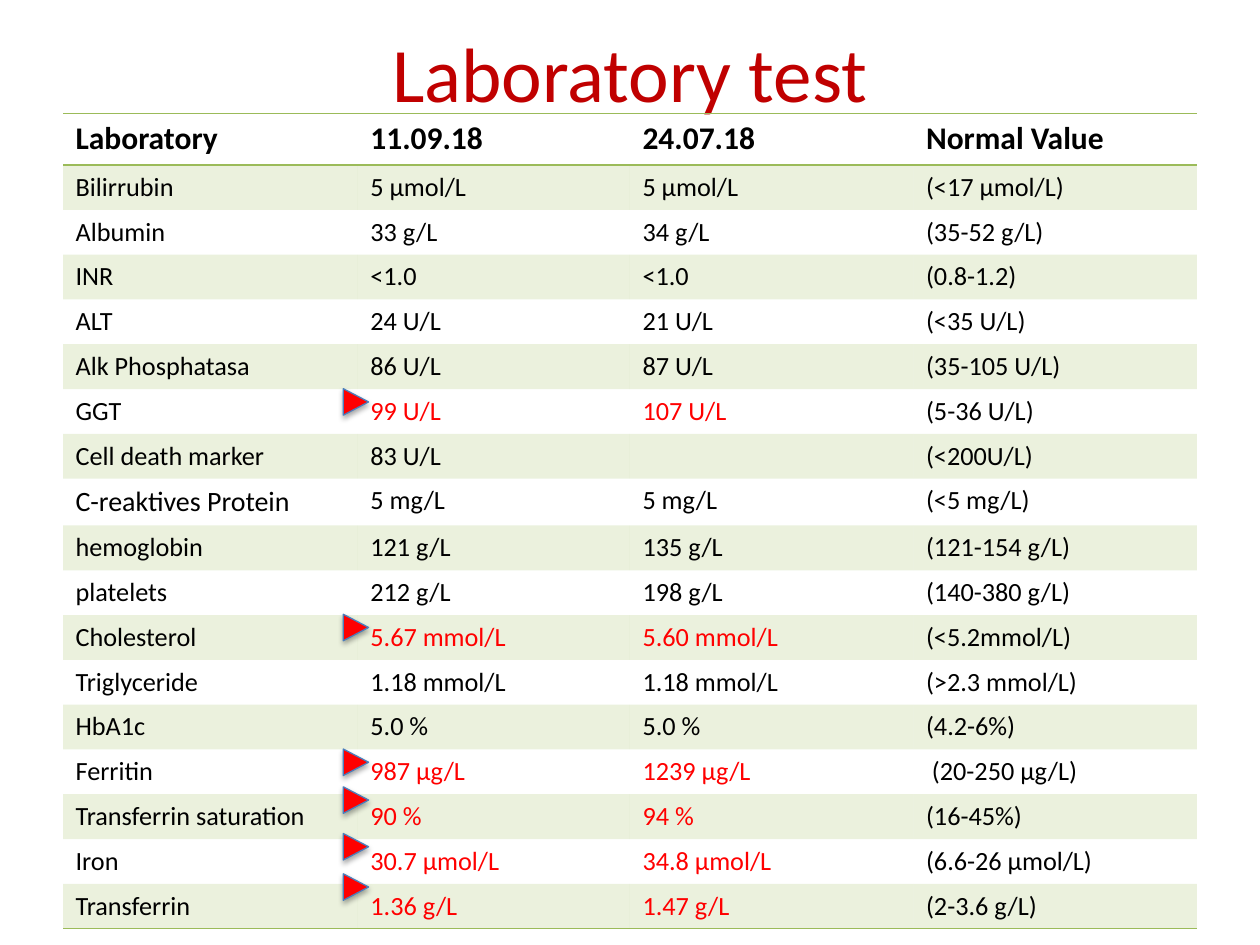
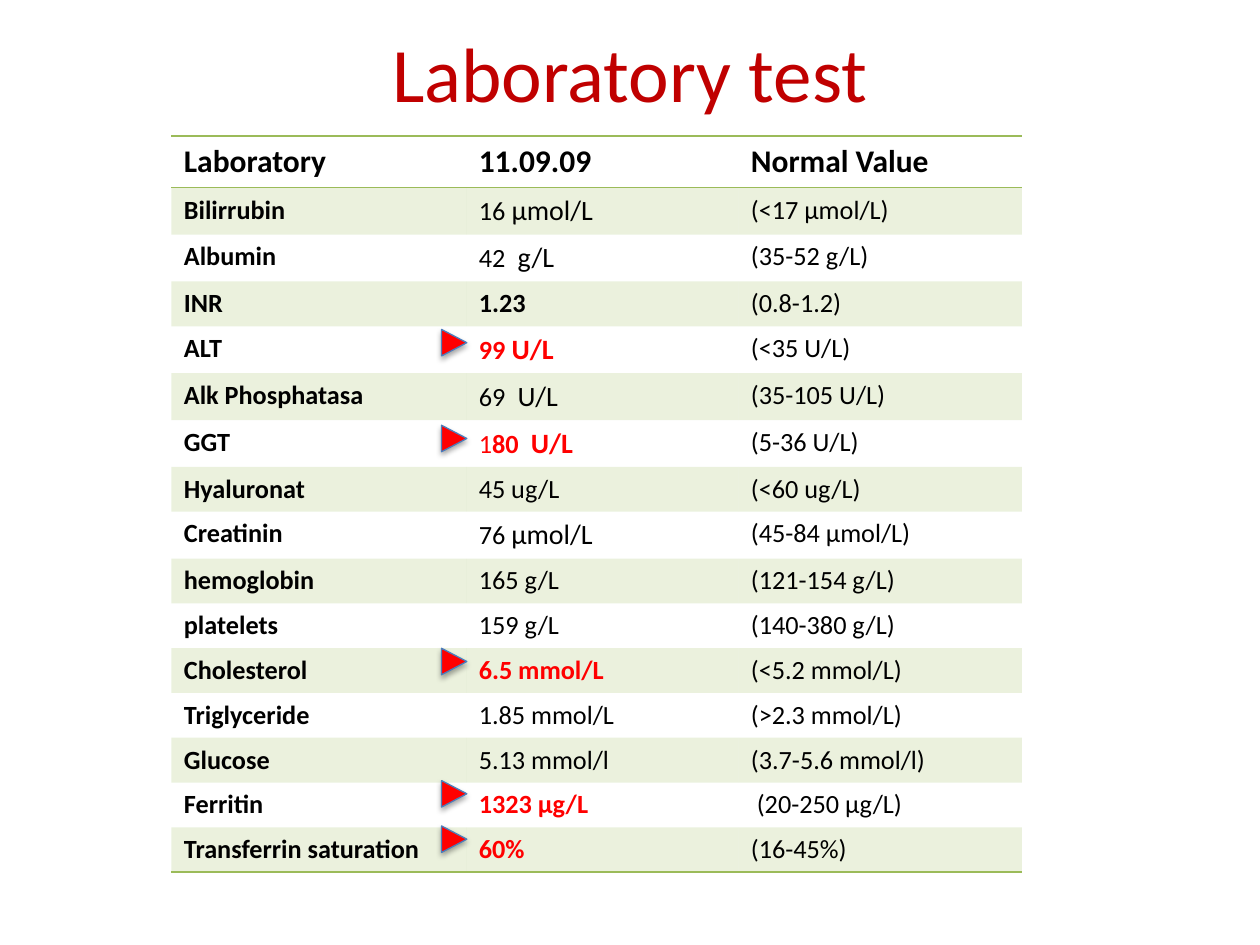
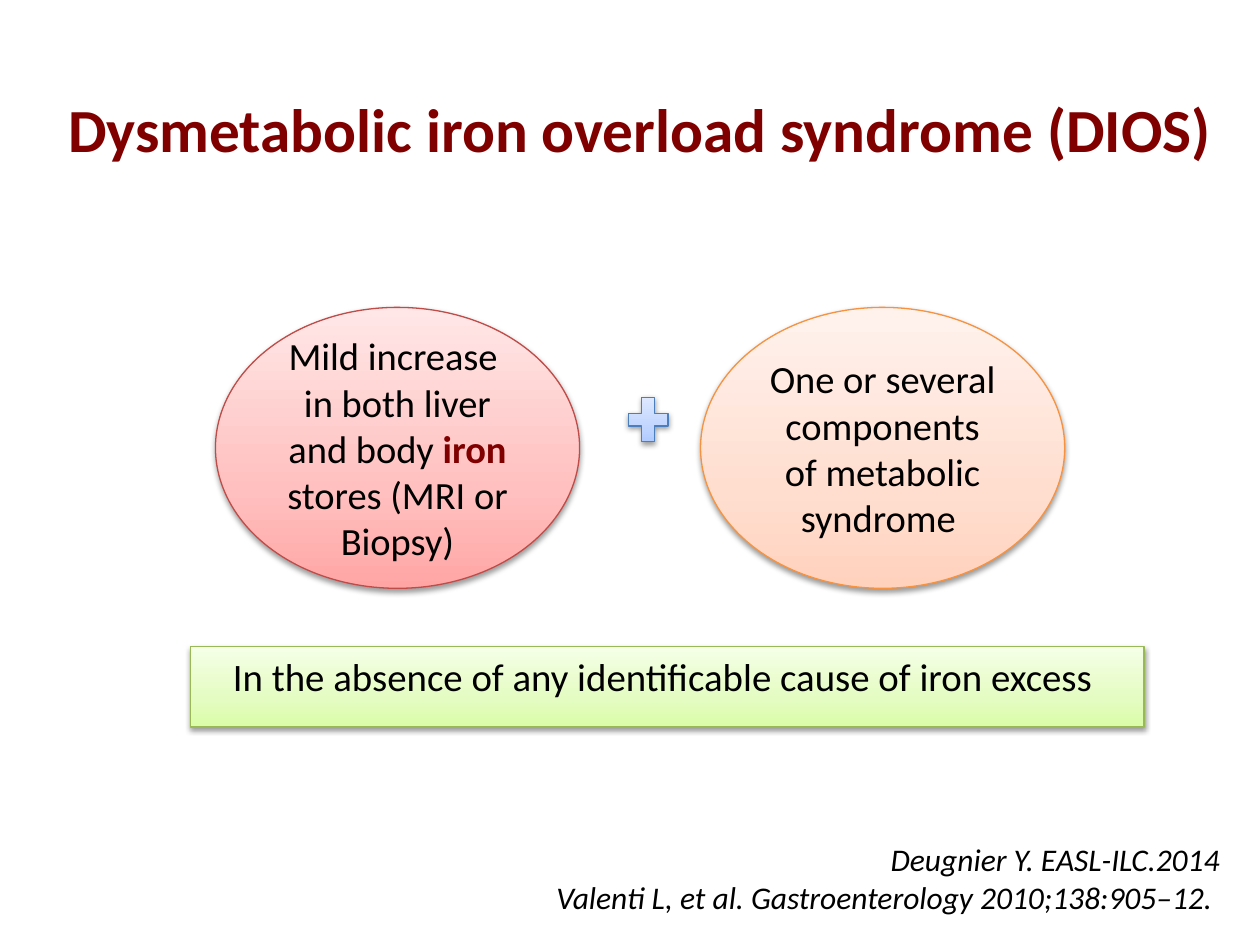
from copy import deepcopy

from lxml.etree import SubElement
from pptx import Presentation
from pptx.dml.color import RGBColor
from pptx.enum.shapes import MSO_SHAPE as SHAPE
from pptx.enum.text import MSO_ANCHOR as ANCHOR, MSO_AUTO_SIZE as AUTO_SIZE, PP_ALIGN as ALIGN
from pptx.oxml.ns import qn
from pptx.util import Inches, Pt

FONT = "Calibri"
BLACK = RGBColor(0x00, 0x00, 0x00)
RED = RGBColor(0xFF, 0x00, 0x00)
TITLE_RED = RGBColor(0xC0, 0x00, 0x00)
MAROON = RGBColor(0x80, 0x00, 0x00)
GREEN = RGBColor(0x9B, 0xBB, 0x59)
BLUE_LINE = RGBColor(0x4B, 0x7E, 0xBC)
ROSE_LINE = RGBColor(0xBF, 0x4C, 0x48)
ORANGE_LINE = RGBColor(0xF6, 0x92, 0x40)
LIME_LINE = RGBColor(0x98, 0xB9, 0x55)
ROSE = (RGBColor(0xFF, 0xA6, 0xA5), RGBColor(0xFF, 0xC0, 0xBF), RGBColor(0xFF, 0xE7, 0xE7))
ORANGE = (RGBColor(0xFF, 0xD2, 0xBD), RGBColor(0xFF, 0xDE, 0xD0), RGBColor(0xFF, 0xF2, 0xED))
LIME = (RGBColor(0xDA, 0xFD, 0xA7), RGBColor(0xE4, 0xFC, 0xC2), RGBColor(0xF5, 0xFF, 0xE7))
BLUE = (RGBColor(0xA4, 0xC4, 0xFF), RGBColor(0xBF, 0xD4, 0xFF), RGBColor(0xE6, 0xEE, 0xFF))
GRADIENT_POSITIONS = (0, 0.35, 1)

SLIDE_WIDTH, SLIDE_HEIGHT = Inches(10), Inches(7.5)
HEADER_ROW, VALUE_ROW = Inches(0.41), Inches(0.3)
MARKER_SIZE = (2.1, 2.67)

TITLE_STYLE = {"size": Pt(44), "color": TITLE_RED}
DIOS_TITLE_STYLE = {"size": Pt(35), "color": MAROON, "bold": True}
HEADER_STYLE = {"size": Pt(18), "bold": True}
VALUE_STYLE = {"size": Pt(15), "bold": False}
LARGE = {"size": Pt(16)}
BOLD = {"bold": True}
PLAIN = {"bold": False}

RECENT_TESTS = [
    ("Laboratory", "11.09.18", "24.07.18", "Normal Value"),
    ("Bilirrubin", "5 μmol/L", "5 μmol/L", "(<17 μmol/L)"),
    ("Albumin", "33 g/L", "34 g/L", "(35-52 g/L)"),
    ("INR", "<1.0", "<1.0", "(0.8-1.2)"),
    ("ALT", "24 U/L", "21 U/L", "(<35 U/L)"),
    ("Alk Phosphatasa", "86 U/L", "87 U/L", "(35-105 U/L)"),
    ("GGT", "99 U/L", "107 U/L", "(5-36 U/L)"),
    ("Cell death marker", "83 U/L", "", "(<200U/L)"),
    ([("C-reaktives Protein", LARGE)], "5 mg/L", "5 mg/L", "(<5 mg/L)"),
    ("hemoglobin", "121 g/L", "135 g/L", "(121-154 g/L)"),
    ("platelets", "212 g/L", "198 g/L", "(140-380 g/L)"),
    ("Cholesterol", "5.67 mmol/L", "5.60 mmol/L", "(<5.2mmol/L)"),
    ("Triglyceride", "1.18 mmol/L", "1.18 mmol/L", "(>2.3 mmol/L)"),
    ("HbA1c", "5.0 %", "5.0 %", "(4.2-6%)"),
    ("Ferritin", "987 μg/L", "1239 μg/L", " (20-250 μg/L)"),
    ("Transferrin saturation", "90 %", "94 %", "(16-45%)"),
    ("Iron", "30.7 μmol/L", "34.8 μmol/L", "(6.6-26 μmol/L)"),
    ("Transferrin", "1.36 g/L", "1.47 g/L", "(2-3.6 g/L)"),
]
RECENT_ABNORMAL = {"GGT": 29.2, "Cholesterol": 53.07, "Ferritin": 67.33,
                   "Transferrin saturation": 71.33, "Iron": 76.27, "Transferrin": 80.53}

EARLY_TESTS = [
    ("Laboratory", "11.09.09", "Normal Value"),
    ("Bilirrubin", [("16", {}), (" μmol/L", LARGE)], "(<17 μmol/L)"),
    ("Albumin", [("42 ", {}), (" g/L", LARGE)], "(35-52 g/L)"),
    ("INR", [("1.23", BOLD)], "(0.8-1.2)"),
    ("ALT", [("99", {}), (" U/L", LARGE)], "(<35 U/L)"),
    ("Alk Phosphatasa", [("69 ", {}), (" U/L", LARGE)], "(35-105 U/L)"),
    ("GGT", [("1", PLAIN), ("80 ", {}), (" U/L", LARGE)], "(5-36 U/L)"),
    ("Hyaluronat", "45 ug/L", "(<60 ug/L)"),
    ("Creatinin", [("76 ", {}), ("μmol/L", LARGE)], "(45-84 μmol/L)"),
    ("hemoglobin", "165 g/L", "(121-154 g/L)"),
    ("platelets", "159 g/L", "(140-380 g/L)"),
    ("Cholesterol", "6.5 mmol/L", "(<5.2 mmol/L)"),
    ("Triglyceride", "1.85 mmol/L", "(>2.3 mmol/L)"),
    ("Glucose", "5.13 mmol/l", "(3.7-5.6 mmol/l)"),
    ("Ferritin", "1323 μg/L", " (20-250 μg/L)"),
    ("Transferrin saturation", "60%", "(16-45%)"),
]
EARLY_ABNORMAL = {"ALT": 20.53, "GGT": 30.67, "Cholesterol": 54.27,
                  "Ferritin": 68.27, "Transferrin saturation": 73.07}


def across(percent):
    return round(SLIDE_WIDTH * percent / 100)


def down(percent):
    return round(SLIDE_HEIGHT * percent / 100)


def place(box):
    """Turn left, top, width and height in percent of the slide into lengths."""
    left, top, width, height = box
    return across(left), down(top), across(width), down(height)


def format_font(font, style):
    for name, value in {"name": FONT, "color": BLACK, **style}.items():
        if name == "color":
            font.color.rgb = value
        else:
            setattr(font, name, value)


def write_runs(paragraph, content, style, align=None):
    """Write a string, or a list of (text, style changes), into a paragraph."""
    paragraph.alignment = align
    runs = [(content, {})] if isinstance(content, str) else content
    for text, changes in runs:
        run = paragraph.add_run()
        run.text = text
        format_font(run.font, {**style, **changes})


def write_paragraphs(frame, contents, style, align, anchor):
    frame.word_wrap = True
    frame.vertical_anchor = anchor
    for number, content in enumerate(contents):
        paragraph = frame.add_paragraph() if number else frame.paragraphs[0]
        write_runs(paragraph, content, style, align)


def add_titled_slide(deck, title, box, style):
    slide = deck.slides.add_slide(deck.slide_layouts[5])
    heading = slide.shapes.title
    heading.left, heading.top, heading.width, heading.height = place(box)
    heading.text_frame.auto_size = AUTO_SIZE.NONE
    write_paragraphs(heading.text_frame, [title], style, ALIGN.CENTER, ANCHOR.MIDDLE)
    return slide


def add_shadow(shape, opacity, distance):
    shape.shadow.inherit = False
    effects = shape._element.spPr.find(qn("a:effectLst"))
    shadow = SubElement(effects, qn("a:outerShdw"), blurRad="40000", dist=str(distance),
                        dir="5400000", rotWithShape="0")
    color = SubElement(shadow, qn("a:srgbClr"), val=str(BLACK))
    SubElement(color, qn("a:alpha"), val=str(opacity * 1000))


def add_outlined(slide, preset, box, line_color):
    shape = slide.shapes.add_shape(preset, *place(box))
    shape.line.color.rgb = line_color
    shape.line.width = Pt(0.75)
    return shape


def add_gradient_shape(slide, preset, box, colors, line_color):
    shape = add_outlined(slide, preset, box, line_color)
    shape.fill.gradient()
    shape.fill.gradient_angle = 90
    stops = shape._element.spPr.find(".//" + qn("a:gsLst"))
    stops.append(deepcopy(stops[0]))
    for stop, position, color in zip(shape.fill.gradient_stops, GRADIENT_POSITIONS, colors):
        stop.position = position
        stop.color.rgb = color
    add_shadow(shape, 38, 20000)
    return shape


def add_marker(slide, left, top):
    marker = add_outlined(slide, SHAPE.ISOSCELES_TRIANGLE, (left, top, *MARKER_SIZE), BLUE_LINE)
    marker.rotation = 90
    marker.fill.solid()
    marker.fill.fore_color.rgb = RED
    add_shadow(marker, 35, 23000)


def rule_cell(cell, sides):
    properties = cell._tc.get_or_add_tcPr()
    for side in sides:
        line = SubElement(properties, qn(f"a:ln{side}"), w=str(Pt(1)))
        fill = SubElement(line, qn("a:solidFill"))
        SubElement(fill, qn("a:srgbClr"), val=str(GREEN))


def fill_cell(cell, banded):
    if not banded:
        cell.fill.background()
        return
    cell.fill.solid()
    cell.fill.fore_color.rgb = GREEN
    color = cell._tc.tcPr.find(qn("a:solidFill"))[0]
    SubElement(color, qn("a:alpha"), val="20000")


def write_cell(cell, content, style):
    paragraph = cell.text_frame.paragraphs[0]
    if content:
        write_runs(paragraph, content, style)
    else:
        SubElement(paragraph._p, qn("a:endParaRPr"), sz=str(round(style["size"].pt * 100)))


def add_test_table(slide, corner, columns, tests, abnormal, emphasis):
    """Draw the tests; emphasis styles the name column and the abnormal values."""
    left, top = corner
    height = HEADER_ROW + VALUE_ROW * (len(tests) - 1)
    table = slide.shapes.add_table(len(tests), len(columns), across(left), down(top),
                                   across(sum(columns)), height).table
    table.horz_banding = False
    table._tbl.tblPr.find(qn("a:tableStyleId")).text = "{2D5ABB26-0587-4C30-8999-92F81FD0307C}"
    for column, width in zip(table.columns, columns):
        column.width = across(width)
    last_column, last_row = len(columns) - 1, len(tests) - 1
    for r, test in enumerate(tests):
        table.rows[r].height = VALUE_ROW if r else HEADER_ROW
        flagged = isinstance(test[0], str) and test[0] in abnormal
        for c, content in enumerate(test):
            style = dict(VALUE_STYLE if r else HEADER_STYLE)
            if r and c == 0:
                style.update(emphasis)
            elif flagged and c < last_column:
                style.update(emphasis, color=RED)
            cell = table.cell(r, c)
            write_cell(cell, content, style)
            rule_cell(cell, "TB" if r == 0 else "B" if r == last_row else "")
            fill_cell(cell, r % 2 == 1)


def build_laboratory_slide(deck, corner, columns, tests, abnormal, marker_offset, emphasis):
    slide = add_titled_slide(deck, "Laboratory test", (5, -0.8, 90, 16.67), TITLE_STYLE)
    add_test_table(slide, corner, columns, tests, abnormal, emphasis)
    left, top = corner
    for drop in abnormal.values():
        add_marker(slide, left + marker_offset, top + drop)


def add_criteria(slide, box):
    """Place the two ellipses at the sides of the box, with the plus between."""
    left, top, width, height = box
    ellipse_width = 28.9
    criteria = [
        (left, ROSE, ROSE_LINE,
         ["Mild increase ", [("in both liver and body ", {}),
                             ("iron ", {"color": MAROON, "bold": True}),
                             ("stores (MRI or Biopsy)", {})]]),
        (left + width - ellipse_width, ORANGE, ORANGE_LINE,
         ["One or several components of metabolic syndrome "]),
    ]
    for x, colors, line_color, contents in criteria:
        ellipse = add_gradient_shape(slide, SHAPE.OVAL, (x, top, ellipse_width, height),
                                     colors, line_color)
        write_paragraphs(ellipse.text_frame, contents, {"size": Pt(22)},
                         ALIGN.CENTER, ANCHOR.MIDDLE)
    add_gradient_shape(slide, SHAPE.MATH_PLUS, (left + 32.2, top + 8.67, 4.3, 6.4),
                       BLUE, BLUE_LINE)


def add_condition(slide, box):
    bar = add_gradient_shape(slide, SHAPE.RECTANGLE, box, LIME, LIME_LINE)
    write_paragraphs(bar.text_frame, ["In the absence of any identificable cause of iron excess "],
                     {"size": Pt(22.2)}, ALIGN.CENTER, ANCHOR.TOP)


def add_references(slide, box):
    references = slide.shapes.add_textbox(*place(box)).text_frame
    write_paragraphs(references, ["Deugnier Y. EASL-ILC.2014",
                                  "Valenti L, et al. Gastroenterology 2010;138:905–12. "],
                     {"size": Pt(18), "italic": True}, ALIGN.RIGHT, ANCHOR.TOP)


def build_syndrome_slide(deck):
    slide = add_titled_slide(deck, "Dysmetabolic iron overload syndrome (DIOS) ",
                             (3.9, 4, 93.8, 19.07), DIOS_TITLE_STYLE)
    add_condition(slide, (15.1, 68.4, 75.7, 8.53))
    add_criteria(slide, (17.1, 32.53, 67.4, 29.73))
    add_references(slide, (35.9, 88.27, 61.9, 9.47))


def main():
    deck = Presentation()
    deck.slide_width, deck.slide_height = SLIDE_WIDTH, SLIDE_HEIGHT
    build_laboratory_slide(deck, (5, 12), (23.4, 21.6, 22.5, 22.5),
                           RECENT_TESTS, RECENT_ABNORMAL, 22.2, PLAIN)
    build_laboratory_slide(deck, (13.6, 14.4), (23.4, 21.6, 22.5),
                           EARLY_TESTS, EARLY_ABNORMAL, 21.4, BOLD)
    build_syndrome_slide(deck)
    deck.save("out.pptx")


if __name__ == "__main__":
    main()
